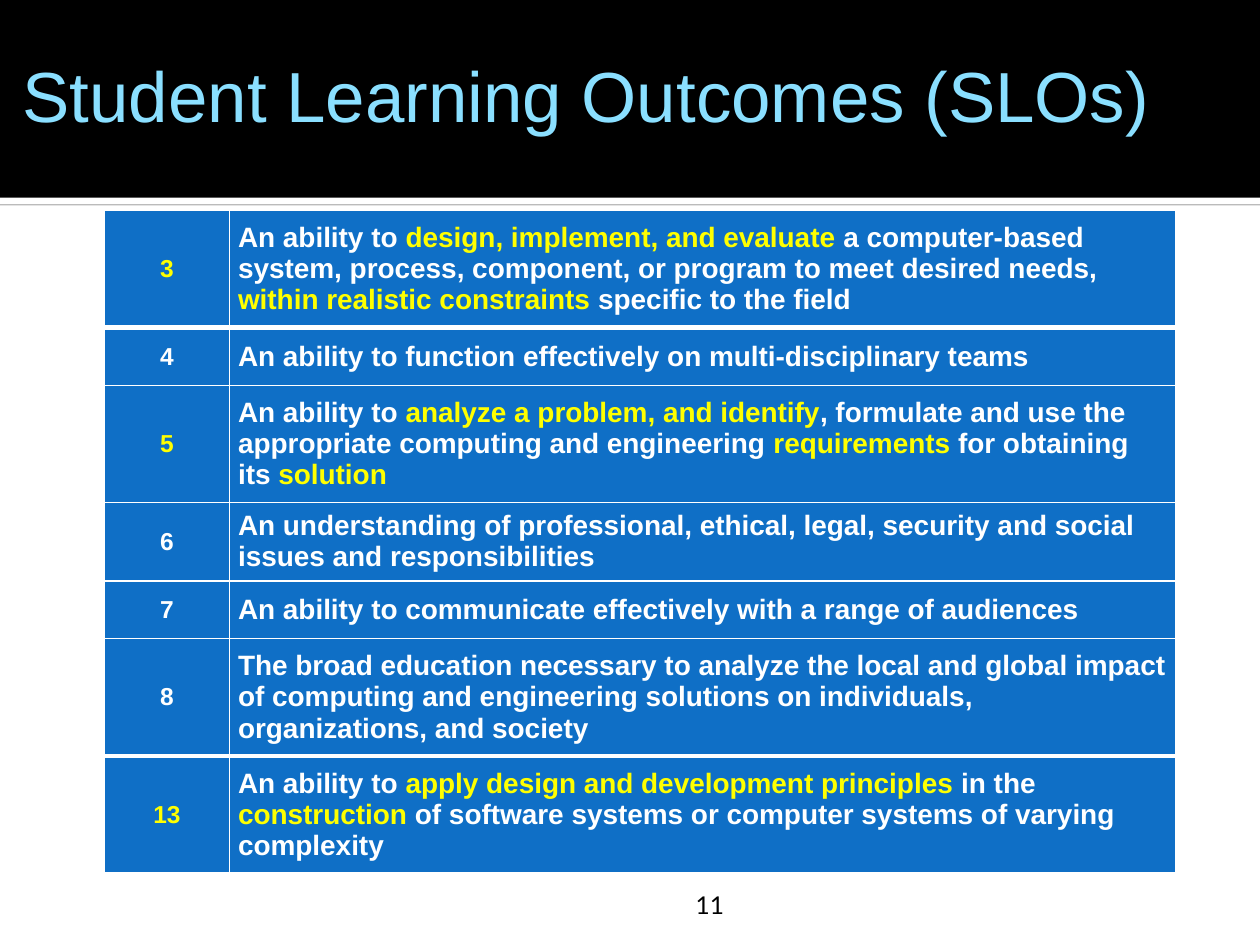
import pptx
import pptx.util
import pptx.dml.color
import pptx.enum.shapes
import pptx.enum.text
import pptx.oxml
import pptx.oxml.ns

Inches = pptx.util.Inches
Pt = pptx.util.Pt
RGB = pptx.dml.color.RGBColor
Align = pptx.enum.text.PP_ALIGN
Anchor = pptx.enum.text.MSO_ANCHOR

BLACK = RGB(0, 0, 0)
WHITE = RGB(255, 255, 255)
GRAY = RGB(128, 128, 128)
SKY = RGB(0x8A, 0xDF, 0xFF)
BLUE = RGB(0x0F, 0x6F, 0xC6)
YELLOW = RGB(255, 255, 0)

TITLE = "Student Learning Outcomes (SLOs)"
PAGE = "11"
GOALS = [
    ("*3*", "An ability to *design, implement, and evaluate *a computer-based system, process, "
     "component, or program to meet desired needs, *within realistic constraints *specific to the field"),
    ("4", "An ability to function effectively on multi-disciplinary teams"),
    ("*5*", "An ability to *analyze a problem, and identify*, formulate and use the appropriate "
     "computing and engineering *requirements* for obtaining its *solution*"),
    ("6", "An understanding of professional, ethical, legal, security and social issues and responsibilities"),
    ("7", "An ability to communicate effectively with a range of audiences"),
    ("8", "The broad education necessary to analyze the local and global impact of computing and "
     "engineering solutions on individuals, organizations, and society"),
    ("*13*", "An ability to *apply design and development principles *in the *construction* of "
     "software systems or computer systems of varying complexity"),
]
COLS = [0.99, 7.51]
ROWS = [0.93, 0.46, 0.93, 0.62, 0.46, 0.93, 0.93]
STYLES = [(14, Align.CENTER), (16, Align.LEFT)]
THICK = {1, 6}
WIDE, HIGH = 10, 7.5
BAND, EDGE = 1.57, 0.05
TOP = 1.67


def add_xml(parent, text, spot=None):
    node = pptx.oxml.parse_xml(text.replace(" ", " " + pptx.oxml.ns.nsdecls("a") + " ", 1))
    if spot is None:
        parent.append(node)
    else:
        parent.insert(spot, node)


def add_bar(slide, top, height, color):
    bar = slide.shapes.add_shape(pptx.enum.shapes.MSO_SHAPE.RECTANGLE,
                                 0, Inches(top), Inches(WIDE), Inches(height))
    bar.shadow.inherit = False
    bar.fill.solid()
    bar.fill.fore_color.rgb = color
    bar.line.fill.background()
    return bar


def add_label(slide, box, text, font, size, color, align, anchor, pads):
    frame = slide.shapes.add_textbox(*map(Inches, box)).text_frame
    frame.word_wrap = True
    frame.vertical_anchor = anchor
    (frame.margin_left, frame.margin_top,
     frame.margin_right, frame.margin_bottom) = map(Inches, pads)
    para = frame.paragraphs[0]
    para.text = text
    para.alignment = align
    para.font.name, para.font.size = font, Pt(size)
    para.font.color.rgb = color


def fill_cell(cell, text, size, align, row):
    cell.fill.solid()
    cell.fill.fore_color.rgb = BLUE
    cell.vertical_anchor = Anchor.MIDDLE
    cell.margin_left = cell.margin_right = Inches(0.07)
    cell.margin_top = cell.margin_bottom = 0
    para = cell.text_frame.paragraphs[0]
    para.alignment = align
    para.font.name, para.font.size, para.font.bold = "Arial", Pt(size), True
    for n, part in enumerate(text.split("*")):
        if part:
            run = para.add_run()
            run.text = part
            run.font.color.rgb = YELLOW if n % 2 else WHITE
    widths = {"L": 1, "R": 1, "T": 3 if row in THICK else 1, "B": 3 if row + 1 in THICK else 1}
    props = cell._tc.get_or_add_tcPr()
    for spot, (side, width) in enumerate(widths.items()):
        add_xml(props, f'<a:ln{side} w="{Pt(width)}"><a:solidFill><a:srgbClr val="{WHITE}"/>'
                f'</a:solidFill></a:ln{side}>', spot)


def add_goals(slide):
    table = slide.shapes.add_table(len(ROWS), len(COLS), Inches(0.83), Inches(TOP),
                                   Inches(sum(COLS)), Inches(sum(ROWS))).table
    for col, width in zip(table.columns, COLS):
        col.width = Inches(width)
    for row, (height, goal) in enumerate(zip(ROWS, GOALS)):
        table.rows[row].height = Inches(height)
        for col, (text, style) in enumerate(zip(goal, STYLES)):
            fill_cell(table.cell(row, col), text, *style, row)


def main():
    deck = pptx.Presentation()
    deck.slide_width, deck.slide_height = Inches(WIDE), Inches(HIGH)
    slide = deck.slides.add_slide(deck.slide_layouts[6])

    strip = add_bar(slide, BAND, EDGE, WHITE)
    add_xml(strip._element.spPr.find(pptx.oxml.ns.qn("a:effectLst")),
            f'<a:outerShdw dist="{Pt(0.8)}" dir="5400000" rotWithShape="0">'
            f'<a:srgbClr val="{GRAY}"><a:alpha val="60000"/></a:srgbClr></a:outerShdw>')
    add_bar(slide, 0, BAND, BLACK)

    add_label(slide, (2.5, 7, 6.27, 0.3), PAGE, "Lato", 14, BLACK,
              Align.CENTER, Anchor.BOTTOM, (0.05, 0.05, 0.05, 0))
    add_label(slide, (0.08, 0.33, 9.92, 0.83), TITLE, "Arial", 40.5, SKY,
              Align.LEFT, Anchor.MIDDLE, (0.1, 0.05, 0.1, 0.05))

    rule = slide.shapes.add_connector(pptx.enum.shapes.MSO_CONNECTOR.STRAIGHT,
                                      Inches(1.25), Inches(TOP), Inches(9.58), Inches(TOP))
    rule.line.color.rgb = WHITE
    rule.line.width = Pt(4)
    add_xml(rule._element.spPr, "<a:effectLst />")

    add_goals(slide)
    deck.save("out.pptx")


if __name__ == "__main__":
    main()
